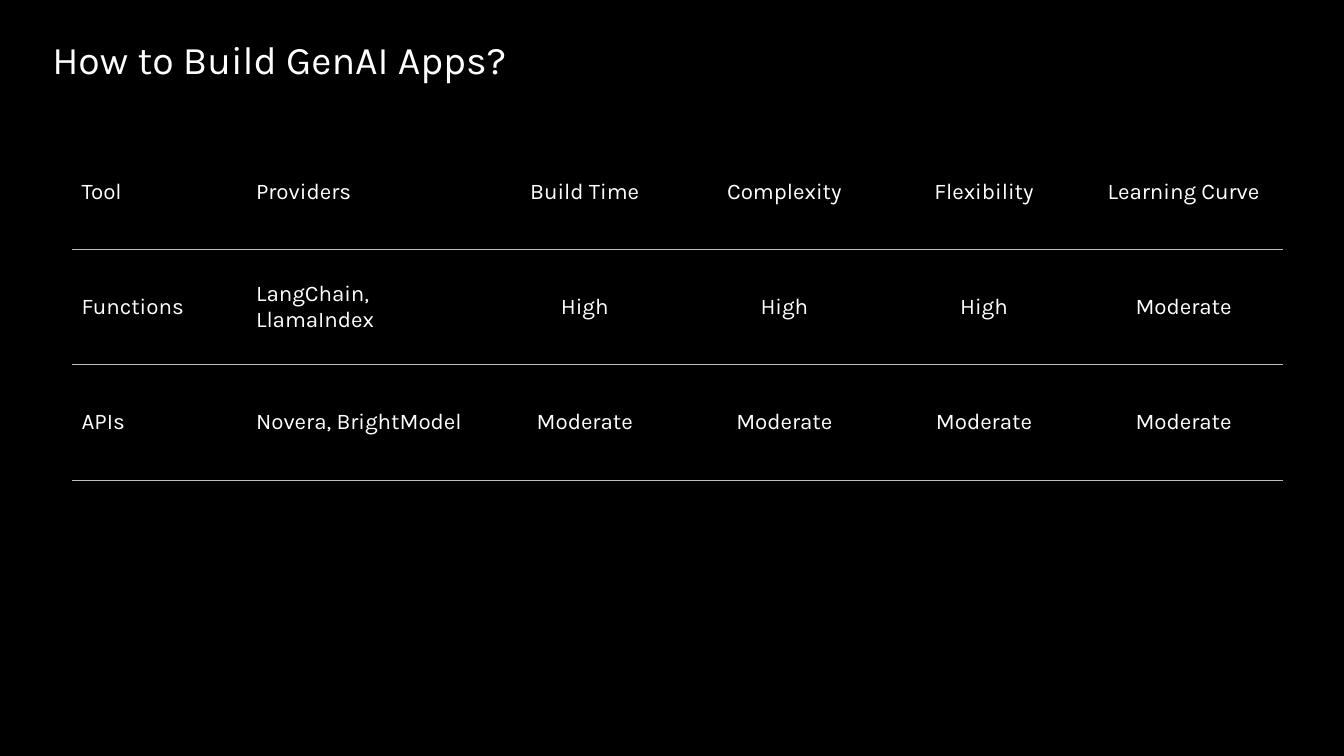
from pptx import Presentation
from pptx.dml.color import RGBColor as Rgb
from pptx.enum.text import MSO_ANCHOR as Anchor, PP_ALIGN as Align
from pptx.oxml import parse_xml
from pptx.oxml.ns import nsdecls
from pptx.util import Inches, Pt

COLORS = {"background": "000000", "text": "FFFFFF", "rule": "BFBFBF"}
FONT = "Karla"
NO_STYLE_NO_GRID = "{2D5ABB26-0587-4C30-8999-92F81FD0307C}"
TITLE_BOX = (0.42, 0.3, 11.48, 0.57)
COMPARISON_BOX = (0.71, 1.33, 12.02, 5.72)
COLUMN_WIDTHS = (1.73, 2.37, 1.98, 1.98, 1.98, 1.98)
ROW_COUNT = 5
LEFT_COLUMNS = 2
COMPARISON = (
    ("Tool", "Providers", "Build Time", "Complexity", "Flexibility", "Learning Curve"),
    ("Functions", "LangChain, LlamaIndex", "High", "High", "High", "Moderate"),
    ("APIs", "Novera, BrightModel", "Moderate", "Moderate", "Moderate", "Moderate"),
)


def write(paragraph, words, size, align=Align.LEFT):
    """Put words in a paragraph with the slide's type style."""
    paragraph.text = words
    paragraph.alignment = align
    paragraph.font.name = FONT
    paragraph.font.size = Pt(size)
    paragraph.font.color.rgb = Rgb.from_string(COLORS["text"])


def add_rule(cell, side):
    """Draw a thin rule on the side "T" or "B" of a cell."""
    cell._tc.get_or_add_tcPr().append(parse_xml(
        f'<a:ln{side} {nsdecls("a")} w="{Pt(0.5)}"><a:solidFill>'
        f'<a:srgbClr val="{COLORS["rule"]}"/></a:solidFill></a:ln{side}>'))


def add_title(slide, box, words):
    """Place the slide title in its box."""
    title = slide.shapes.add_textbox(*map(Inches, box)).text_frame
    title.word_wrap = True
    write(title.paragraphs[0], words, 28)


def add_comparison(slide, box, rows):
    """Place the ruled comparison table, with spare rows at the foot."""
    frame = slide.shapes.add_table(ROW_COUNT, len(COLUMN_WIDTHS), *map(Inches, box))
    table = frame.table
    table.first_row = table.horz_banding = False
    table._tbl.tblPr.find("{*}tableStyleId").text = NO_STYLE_NO_GRID
    for column, width in zip(table.columns, COLUMN_WIDTHS):
        column.width = Inches(width)
    for row in table.rows:
        row.height = Inches(box[3] / ROW_COUNT)
    for r, values in enumerate(rows):
        for c, value in enumerate(values):
            cell = table.cell(r, c)
            cell.vertical_anchor = Anchor.MIDDLE
            align = Align.LEFT if c < LEFT_COLUMNS else Align.CENTER
            write(cell.text_frame.paragraphs[0], value, 16, align)
            if r > 0:
                add_rule(cell, "T")
            if r < len(rows) - 1:
                add_rule(cell, "B")
    for cell in table.iter_cells():
        cell.fill.background()


def main():
    """Build and save the slide."""
    deck = Presentation()
    deck.slide_width, deck.slide_height = Inches(13.33), Inches(7.5)
    slide = deck.slides.add_slide(deck.slide_layouts[6])
    slide.background.fill.solid()
    slide.background.fill.fore_color.rgb = Rgb.from_string(COLORS["background"])
    add_title(slide, TITLE_BOX, "How to Build GenAI Apps?")
    add_comparison(slide, COMPARISON_BOX, COMPARISON)
    deck.save("out.pptx")


if __name__ == "__main__":
    main()
